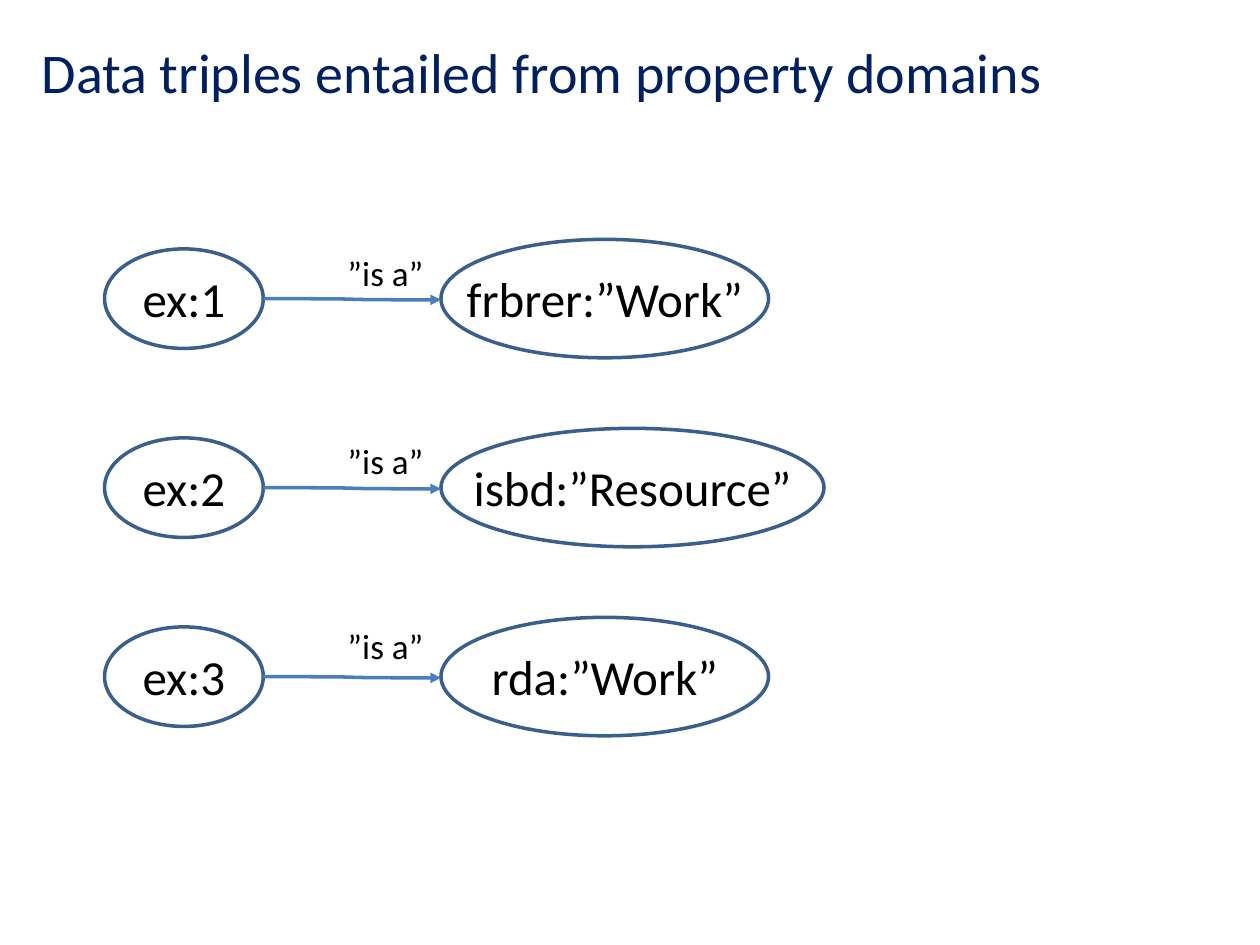
import dataclasses

import lxml.etree
import pptx
import pptx.dml.color
import pptx.enum.shapes
import pptx.enum.text
import pptx.oxml.ns
import pptx.util
from pptx.util import Inches


@dataclasses.dataclass(frozen=True)
class Theme:
    """Colours and type sizes of the slide."""

    font: str = "Calibri"
    title_color: str = "002060"
    text_color: str = "000000"
    node_fill: str = "FFFFFF"
    node_line: str = "3A5F8C"
    arrow: str = "4B7EBC"
    title_size: int = 32
    node_size: int = 28
    label_size: int = 20
    line_width: int = 2


THEME = Theme()
ALIGN = pptx.enum.text.PP_ALIGN


def rgb(value):
    """Turn a hex string into a colour."""
    return pptx.dml.color.RGBColor.from_string(value)


def write_text(shape, text, size, color, align=ALIGN.LEFT, wrap=True):
    """Set one formatted paragraph in a shape."""
    frame = shape.text_frame
    frame.text = text
    frame.word_wrap = wrap
    frame.vertical_anchor = pptx.enum.text.MSO_ANCHOR.TOP
    paragraph = frame.paragraphs[0]
    paragraph.alignment = align
    font = paragraph.runs[0].font
    font.name = THEME.font
    font.size = pptx.util.Pt(size)
    font.color.rgb = rgb(color)


def add_title(slide, text, left, top, width, height):
    """Place the slide title in its placeholder."""
    title = slide.shapes.title
    title.left, title.top, title.width, title.height = left, top, width, height
    write_text(title, text, THEME.title_size, THEME.title_color, wrap=False)
    title.text_frame.auto_size = pptx.enum.text.MSO_AUTO_SIZE.SHAPE_TO_FIT_TEXT


def add_node(shapes, text, left, middle, width, height):
    """Draw an ellipse centred on a height, with its caption."""
    ellipse = shapes.add_shape(
        pptx.enum.shapes.MSO_SHAPE.OVAL, left, middle - height // 2, width, height
    )
    ellipse.shadow.inherit = False
    ellipse.fill.solid()
    ellipse.fill.fore_color.rgb = rgb(THEME.node_fill)
    ellipse.line.color.rgb = rgb(THEME.node_line)
    ellipse.line.width = pptx.util.Pt(THEME.line_width)
    caption_height = Inches(0.57)
    caption = shapes.add_textbox(left, middle - caption_height // 2, width, caption_height)
    write_text(caption, text, THEME.node_size, THEME.text_color, ALIGN.CENTER)


def add_arrow(shapes, start_x, start_y, end_x, end_y):
    """Draw a curved connector with a triangular head at its end."""
    arrow = shapes.add_connector(
        pptx.enum.shapes.MSO_CONNECTOR.CURVE, start_x, start_y, end_x, end_y
    )
    arrow.line.color.rgb = rgb(THEME.arrow)
    arrow.line.width = pptx.util.Pt(THEME.line_width)
    qualified = pptx.oxml.ns.qn
    line = arrow.line._get_or_add_ln()
    lxml.etree.SubElement(line, qualified("a:tailEnd"), type="triangle")
    lxml.etree.SubElement(arrow._element.spPr, qualified("a:effectLst"))


def add_triple(slide, subject, value, left, top, value_width, label_top):
    """Group a subject, its predicate arrow and its object in one row."""
    shapes = slide.shapes.add_group_shape().shapes
    subject_width, object_height = Inches(1.26), Inches(0.94)
    subject_right = left + subject_width
    object_left = subject_right + Inches(1.41)
    middle = top + object_height // 2
    label_width = Inches(0.84)
    add_node(shapes, subject, left, middle, subject_width, Inches(0.79))
    add_node(shapes, value, object_left, middle, value_width, object_height)
    add_arrow(shapes, subject_right, middle, object_left, middle + Inches(0.01))
    label = shapes.add_textbox(
        object_left - label_width, top + label_top, label_width, Inches(0.44)
    )
    write_text(label, "”is a”", THEME.label_size, THEME.text_color)


def main():
    """Build and save the presentation."""
    presentation = pptx.Presentation()
    presentation.slide_width, presentation.slide_height = Inches(10), Inches(7.5)
    slide = presentation.slides.add_slide(presentation.slide_layouts[5])
    add_title(
        slide, "Data triples entailed from property domains",
        Inches(0.23), Inches(0.25), Inches(8.23), Inches(0.64),
    )
    triples = [
        ("ex:1", "frbrer:”Work”", 2.6, 0.05),
        ("ex:2", "isbd:”Resource”", 3.04, 0.04),
        ("ex:3", "rda:”Work”", 2.6, 0.01),
    ]
    for row, (subject, value, width, label_top) in enumerate(triples):
        add_triple(
            slide, subject, value, Inches(0.83), Inches(1.9 + 1.5 * row),
            Inches(width), Inches(label_top),
        )
    presentation.save("out.pptx")


if __name__ == "__main__":
    main()
